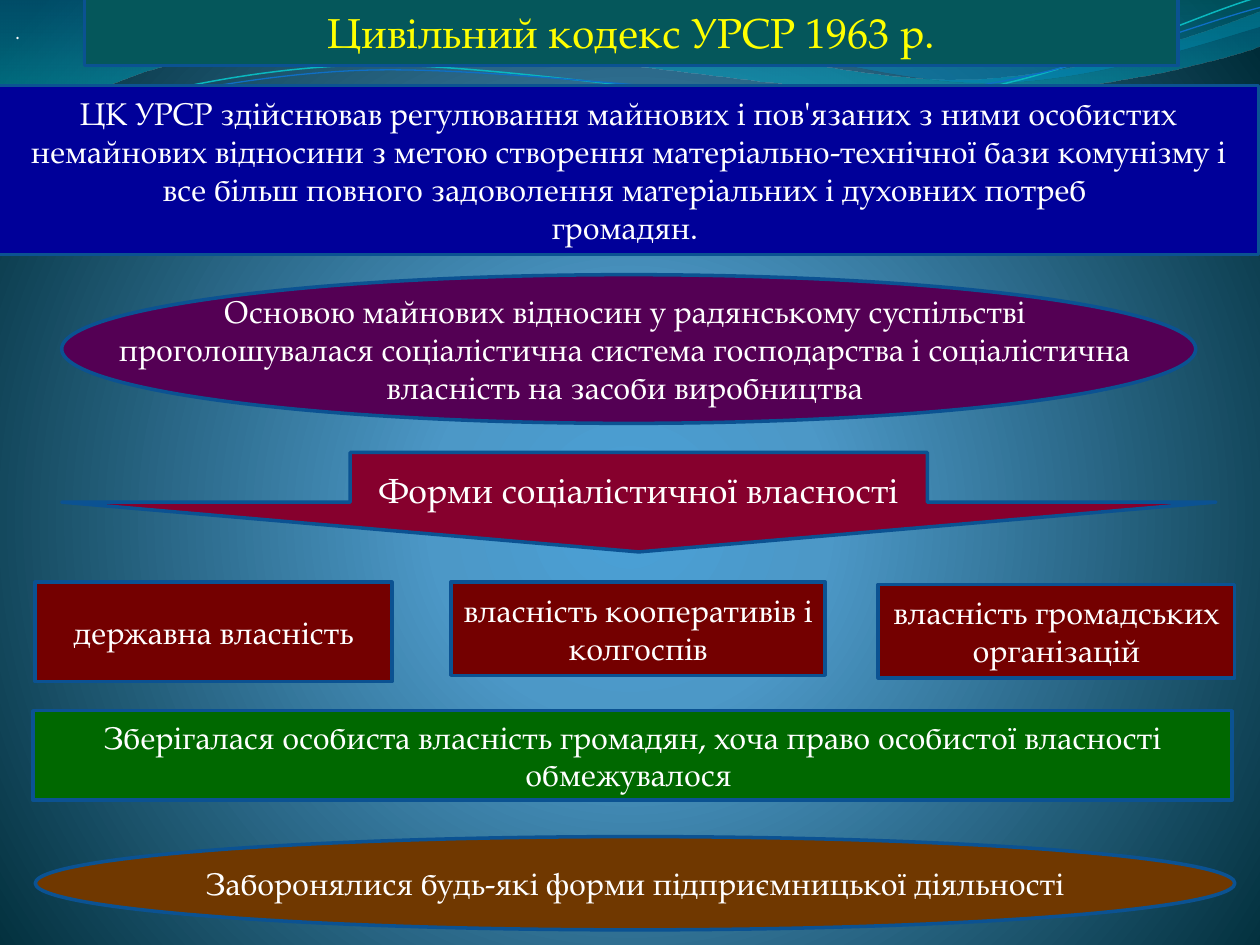
import math
import lxml.etree
import pptx
import pptx.dml.color
import pptx.enum.shapes
import pptx.enum.text
import pptx.oxml.ns
import pptx.util

Inches = pptx.util.Inches
Shapes = pptx.enum.shapes.MSO_SHAPE
qn = pptx.oxml.ns.qn
COLORS = {
    "white": "FFFFFF", "yellow": "FFFF00", "outline": "0B5292", "teal": "05575B",
    "navy": "000099", "purple": "540054", "crimson": "86002D", "maroon": "740000",
    "green": "006800", "brown": "703800", "cyan": "0AB8BF", "blue": "0F6FC6",
    "sky": "4AA0D6", "steel": "4C98C7", "deep": "002C38", "ocean": "0074A1",
    "aqua": "00C6CF", "lagoon": "00A1A9", "azure": "008BBF",
}
BACKGROUND = [(0, "sky", 100), (25, "steel", 100), (100, "deep", 100)]
CIRCLE = '<a:path path="circle"><a:fillToRect l="10000" t="110000" r="10000" b="100000"/></a:path>'
DOWNWARD = '<a:lin ang="5400000" scaled="0"/>'

WAVES = [
    ([(0, 0), (4.4, -0.01), (4.76, 0.17, 6.64, 0.63, 7.58, 0.63),
      (8.53, 0.63, 9.58, 0.26, 10, 0.09), (10.01, 0.36),
      (9.83, 0.44, 8.7, 0.76, 7.46, 0.75), (6.22, 0.75, 3.82, 0.28, 2.57, 0.34),
      (1.29, 0.36, 0.46, 0.83, -0.01, 1.13), (0, 0)],
     [(0, "ocean", 45), (100, "aqua", 55)]),
    ([(4.79, -0.01), (5.09, 0.11, 6.82, 0.62, 7.69, 0.65),
      (8.56, 0.69, 9.61, 0.32, 10, 0.21), (10, 0), (4.79, -0.01)],
     [(0, "lagoon", 30), (80, "azure", 45)]),
]
STRANDS = [
    ([(0, 1.11), (0.48, 0.93, 1.58, 0.57, 2.77, 0.52), (3.95, 0.47, 5.93, 0.89, 7.13, 0.8),
      (8.33, 0.71, 9.38, 0.15, 9.98, -0.02)], (4.99, 0.58), "cyan", 0.85),
    ([(0, 1.04), (0.47, 0.96, 1.64, 0.61, 2.83, 0.56), (4.03, 0.51, 5.97, 0.84, 7.17, 0.75),
      (8.36, 0.67, 9.41, 0.21, 10, 0.06)], (5, 0.59), "blue", 0.75),
]
STRAND_TILT = 357.3

TITLE = (Shapes.RECTANGLE, (0.67, -0.01, 8.68, 0.53), "teal", ["Цивільний кодекс УРСР 1963 р."],
         {"size": 24, "color": "yellow"})
BLOCKS = [
    (Shapes.OVAL, (0.49, 2.18, 9, 1.18), "purple",
     ["Основою майнових відносин у радянському суспільстві ",
      "проголошувалася соціалістична система господарства і соціалістична ",
      "власність на засоби виробництва "], {"wrap": False}),
    (Shapes.DOWN_ARROW, (0.49, 3.59, 9.16, 0.79), "crimson",
     ["Форми соціалістичної власності"], {"size": 20}),
    (Shapes.RECTANGLE, (0.28, 4.62, 2.83, 0.79), "maroon", ["державна власність"], {}),
    (Shapes.RECTANGLE, (3.58, 4.62, 2.97, 0.74), "maroon",
     ["власність кооперативів і колгоспів"], {}),
    (Shapes.RECTANGLE, (6.97, 4.64, 2.83, 0.74), "maroon",
     ["власність громадських організацій"], {}),
    (Shapes.RECTANGLE, (-0.01, 0.68, 10, 1.34), "navy",
     ["ЦК УРСР здійснював регулювання майнових і пов'язаних з ними особистих "
      "немайнових відносини з метою створення матеріально-технічної бази комунізму "
      "і все більш повного задоволення матеріальних і духовних потреб \nгромадян. "], {}),
    (Shapes.RECTANGLE, (0.26, 5.64, 9.52, 0.71), "green",
     ["Зберігалася особиста власність громадян, хоча право особистої власності обмежувалося "], {}),
    (Shapes.OVAL, (0.28, 6.64, 9.52, 0.74), "brown",
     ["Заборонялися будь-які форми підприємницької діяльності"], {"wrap": False}),
]


def rgb(name):
    return pptx.dml.color.RGBColor.from_string(COLORS[name])


def gradient(stops, direction):
    marks = "".join(
        f'<a:gs pos="{place * 1000}"><a:srgbClr val="{COLORS[name]}">'
        f'<a:alpha val="{opacity * 1000}"/></a:srgbClr></a:gs>'
        for place, name, opacity in stops)
    return lxml.etree.fromstring(
        f'<a:gradFill {pptx.oxml.ns.nsdecls("a")} rotWithShape="1">'
        f'<a:gsLst>{marks}</a:gsLst>{direction}</a:gradFill>')


def set_gradient(fill, holder, stops, direction):
    fill.gradient()
    holder.replace(holder.find(qn("a:gradFill")), gradient(stops, direction))


def turn(segments, degrees, middle):
    cosine, sine = math.cos(math.radians(degrees)), math.sin(math.radians(degrees))
    turned = []
    for segment in segments:
        offsets = [(x - middle[0], y - middle[1]) for x, y in zip(segment[::2], segment[1::2])]
        turned.append([value for x, y in offsets for value in
                       (middle[0] + x * cosine - y * sine, middle[1] + x * sine + y * cosine)])
    return turned


def add_curve(shapes, segments, close):
    points = [[Inches(value) for value in pair] for segment in segments
              for pair in zip(segment[::2], segment[1::2])]
    builder = shapes.build_freeform(*points[0])
    builder.add_line_segments(points[1:], close=close)
    shape = builder.convert_to_shape()
    shape.shadow.inherit = False
    lines = iter(list(shape.element.iter(qn("a:lnTo"))))
    for segment in segments[1:]:
        line = next(lines)
        if len(segment) == 6:
            bezier = lxml.etree.Element(qn("a:cubicBezTo"))
            line.addprevious(bezier)
            for part in (line, next(lines), next(lines)):
                bezier.append(part[0])
                part.getparent().remove(part)
    return shape


def write(frame, paragraphs, size=18, color="white", font="TeX Gyre Pagella", align="CENTER", wrap=True):
    frame.word_wrap = wrap
    frame.vertical_anchor = pptx.enum.text.MSO_ANCHOR.MIDDLE
    style = {"size": pptx.util.Pt(size), "name": font}
    for index, text in enumerate(paragraphs):
        para = frame.add_paragraph() if index else frame.paragraphs[0]
        para.alignment = getattr(pptx.enum.text.PP_ALIGN, align)
        for number, line in enumerate(text.split("\n")):
            if number:
                para.add_line_break()
            span = para.add_run()
            span.text = line
            span.font.color.rgb = rgb(color)
            for key, value in style.items():
                setattr(span.font, key, value)


def add_block(page, kind, place, color, paragraphs, style):
    box = page.shapes.add_shape(kind, *map(Inches, place))
    box.shadow.inherit = False
    box.fill.solid()
    box.fill.fore_color.rgb = rgb(color)
    box.line.color.rgb = rgb("outline")
    box.line.width = pptx.util.Pt(2)
    write(box.text_frame, paragraphs, **style)


def main():
    deck = pptx.Presentation()
    deck.slide_width, deck.slide_height = Inches(10), Inches(7.5)
    page = deck.slides.add_slide(deck.slide_layouts[6])
    fill = page.background.fill
    set_gradient(fill, page.element.find(".//" + qn("p:bgPr")), BACKGROUND, CIRCLE)

    for segments, stops in WAVES:
        wave = add_curve(page.shapes, segments, True)
        wave.line.fill.background()
        set_gradient(wave.fill, wave.element.spPr, stops, DOWNWARD)
    strands = page.shapes.add_group_shape()
    for segments, middle, color, width in STRANDS:
        strand = add_curve(strands.shapes, turn(segments, -STRAND_TILT, middle), False)
        strand.rotation = STRAND_TILT
        strand.fill.background()
        strand.line.color.rgb = rgb(color)
        strand.line.width = pptx.util.Pt(width)

    add_block(page, *TITLE)
    dot = page.shapes.add_textbox(*map(Inches, (0, 0.12, 0.28, 0.27)))
    write(dot.text_frame, ["."], size=10, font="Noto Sans Mono", align="LEFT", wrap=False)
    dot.text_frame.auto_size = pptx.enum.text.MSO_AUTO_SIZE.SHAPE_TO_FIT_TEXT
    for block in BLOCKS:
        add_block(page, *block)
    deck.save("out.pptx")


if __name__ == "__main__":
    main()
